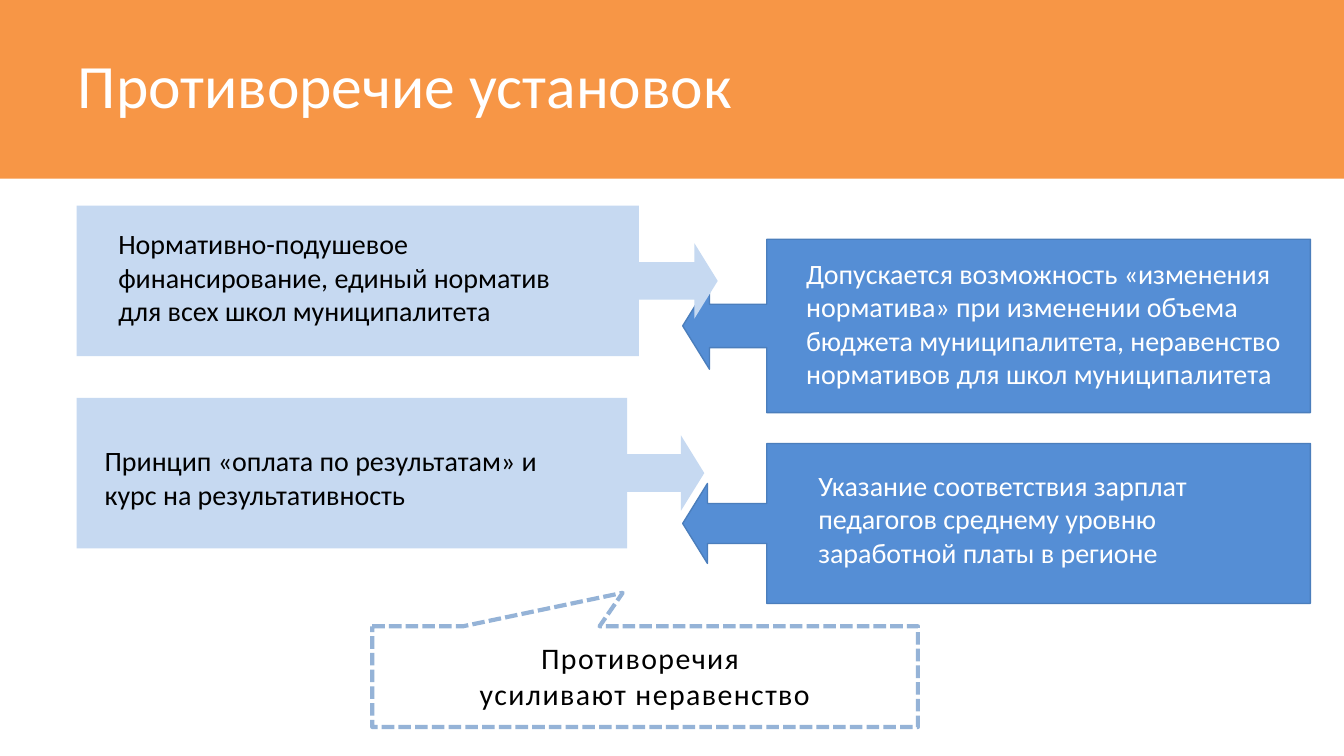
from pptx import Presentation
from pptx.dml.color import RGBColor
from pptx.enum.dml import MSO_LINE
from pptx.enum.shapes import MSO_SHAPE as SHAPE
from pptx.enum.text import MSO_ANCHOR as ANCHOR, MSO_AUTO_SIZE as AUTO_SIZE, PP_ALIGN as ALIGN
from pptx.util import Emu, Pt

PX = 9144  # 100 px to the inch
WIDTH = 1000
ORANGE, BLUE, PALE = "F79646", "558ED5", "C6D9F1"
BLUE_EDGE, DASH_EDGE = "4B7EBC", "95B3D7"
WHITE, BLACK = "FFFFFF", "000000"

# Each row holds a claim and a reply: arrow box, text box relative to it, side margin, text.
ROWS = [
    (((57, 153, 477, 112), (23, 17, 371, 72), 8,
      "Нормативно-подушевое финансирование, единый норматив для всех школ муниципалитета"),
     ((508, 178, 467, 129), (82, 7, 374, 111), 10,
      "Допускается возможность «изменения норматива» при изменении объема бюджета "
      "муниципалитета, неравенство нормативов для школ муниципалитета")),
    (((57, 296, 467, 112), (11, 23, 371, 72), 10,
      "Принцип «оплата по результатам» и курс на результативность"),
     ((508, 330, 467, 119), (91, 13, 337, 86), 10,
      "Указание соответствия зарплат педагогов среднему уровню заработной платы в регионе")),
]


def px(*lengths):
    return [Emu(length * PX) for length in lengths]


def rgb(hex_color):
    return RGBColor.from_string(hex_color)


def apply_format(target, values):
    for name, value in values.items():
        setattr(target, name, value)


def write(frame, lines, size, color, margins, align=ALIGN.LEFT):
    """Fill a text frame with one paragraph; margins are left, top, right, bottom in px."""
    left, top, right, bottom = px(*margins)
    apply_format(frame, {
        "word_wrap": True, "auto_size": AUTO_SIZE.NONE, "vertical_anchor": ANCHOR.MIDDLE,
        "margin_left": left, "margin_top": top, "margin_right": right, "margin_bottom": bottom,
    })
    paragraph = frame.paragraphs[0]
    paragraph.alignment = align
    for index, line in enumerate(lines):
        if index:
            paragraph.add_line_break()
        run = paragraph.add_run()
        run.text = line
        apply_format(run.font, {"name": "Calibri", "size": Pt(size)})
        run.font.color.rgb = rgb(color)
    return paragraph


def add_outlined(slide, kind, box, fill, edge=None, weight=0.75, adjustments=()):
    shape = slide.shapes.add_shape(kind, *px(*box))
    shape.shadow.inherit = False
    shape.fill.solid()
    shape.fill.fore_color.rgb = rgb(fill)
    if edge:
        shape.line.color.rgb = rgb(edge)
        shape.line.width = Pt(weight)
    else:
        shape.line.fill.background()
    for index, value in enumerate(adjustments):
        shape.adjustments[index] = value
    return shape


def title_band(slide, box):
    title = slide.shapes.title
    apply_format(title, dict(zip(("left", "top", "width", "height"), px(*box))))
    title.fill.solid()
    title.fill.fore_color.rgb = rgb(ORANGE)
    heading = write(title.text_frame, ["Противоречие установок"], 33, WHITE, (58, 6, 6, 6))
    heading.line_spacing = 0.88


def arrow_box(slide, box, text_box, side_margin, text, is_claim):
    """A claim is pale and points right; a reply is blue and points left."""
    arrow = add_outlined(slide, SHAPE.LEFT_ARROW_CALLOUT, box,
                         PALE if is_claim else BLUE, None if is_claim else BLUE_EDGE,
                         adjustments=(0.25, 0.25, 0.155, 0.877 if is_claim else 0.866))
    arrow.rotation = 180 if is_claim else 0
    dx, dy, width, height = text_box
    label = slide.shapes.add_textbox(*px(box[0] + dx, box[1] + dy, width, height))
    write(label.text_frame, [text], 15, BLACK if is_claim else WHITE,
          (side_margin, 4, side_margin, 4))


def conclusion(slide, box):
    callout = add_outlined(slide, SHAPE.RECTANGULAR_CALLOUT, box, WHITE, DASH_EDGE, 2.25,
                           (-0.041, -0.832))
    callout.line.dash_style = MSO_LINE.SQUARE_DOT
    paragraph = write(callout.text_frame, ["Противоречия ", "усиливают неравенство"],
                      16, BLACK, (15, 4, 15, 6), ALIGN.CENTER)
    for run in paragraph.runs:
        run._r.get_or_add_rPr().set("spc", "80")


def main():
    deck = Presentation()
    deck.slide_width = Emu(WIDTH * PX)
    deck.slide_height = Emu(WIDTH * PX * 9 // 16)
    slide = deck.slides.add_slide(deck.slide_layouts.get_by_name("Title Only"))
    title_band(slide, (0, 0, WIDTH, 133))
    for claim, reply in reversed(ROWS):
        arrow_box(slide, *reply, is_claim=False)
        arrow_box(slide, *claim, is_claim=True)
    conclusion(slide, (277, 466, 406, 75))
    deck.save("out.pptx")


if __name__ == "__main__":
    main()
